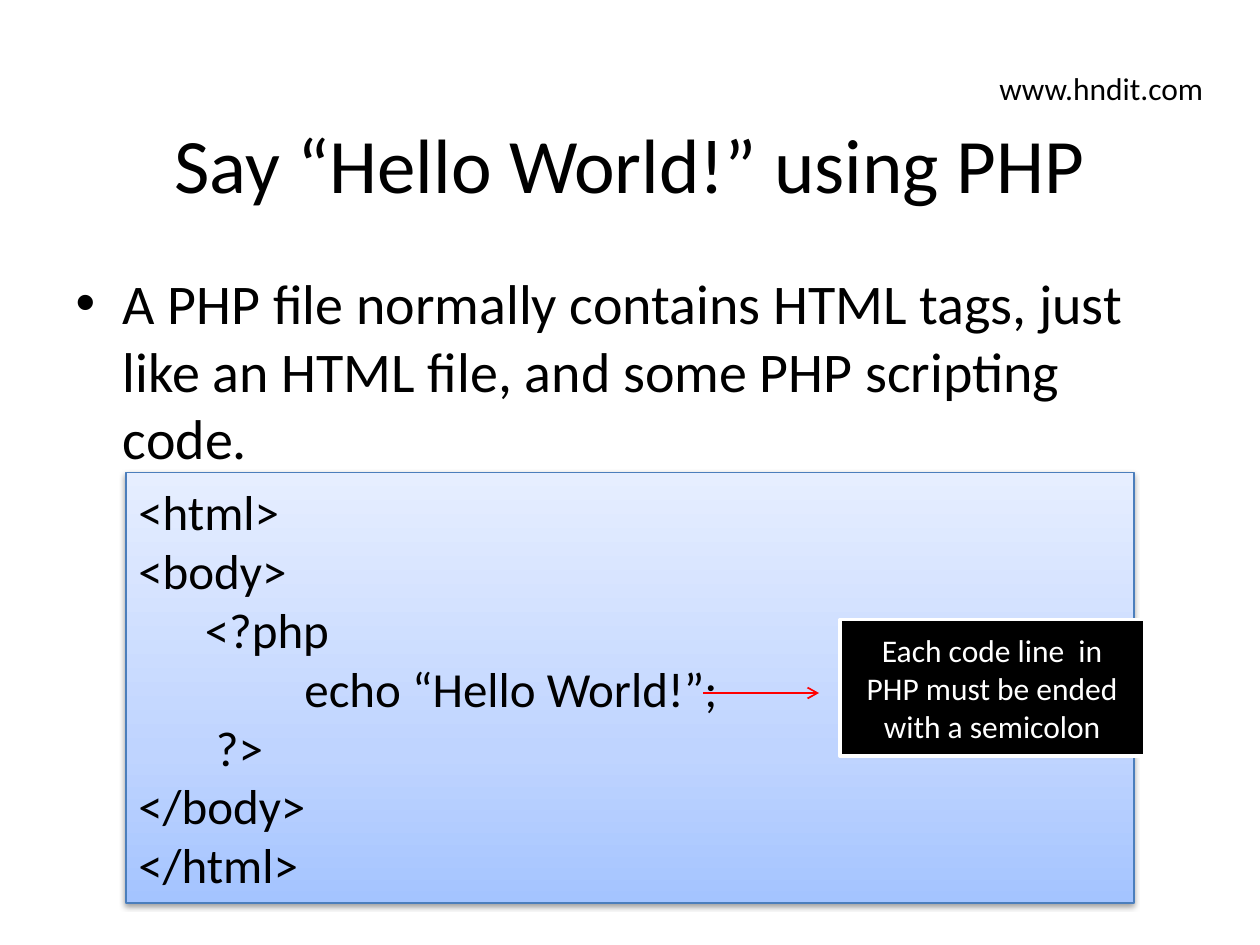
from lxml import etree
from pptx import Presentation, util as u
from pptx.dml.color import RGBColor
from pptx.enum import shapes, text
from pptx.oxml.ns import qn

COLORS = {"ink": "000000", "paper": "FFFFFF", "edge": "4B7EBC", "arrow": "FF0000"}
STOPS = [(0, "A4C4FF"), (35, "BFD4FF"), (100, "E6EEFF")]
CODE = [
    "<html>",
    "<body>",
    "      <?php",
    "               echo “Hello World!”;\v       ?>",
    "</body>",
    "</html>",
]


def rgb(name):
    return RGBColor.from_string(COLORS[name])


def add(parent, tag, **attrs):
    node = etree.SubElement(parent, qn(tag))
    for key, val in attrs.items():
        node.set(key, str(val))
    return node


class Deck:
    """Style and current slide; lengths are cells of a 120 by 90 grid."""

    font = "Calibri"
    cols, rows = 120, 90

    def __init__(self):
        self.prs = Presentation()
        self.prs.slide_width, self.prs.slide_height = u.Inches(10), u.Inches(7.5)
        self.slide = self.prs.slides.add_slide(self.prs.slide_layouts[1])

    def grid(self, x, y):
        return (round(self.prs.slide_width * x / self.cols),
                round(self.prs.slide_height * y / self.rows))

    def area(self, x, y, wide, high):
        return (*self.grid(x, y), *self.grid(wide, high))

    def fill_text(self, shape, lines, size, color="ink", align="LEFT", anchor="MIDDLE"):
        frame = shape.text_frame
        frame.word_wrap = True
        frame.vertical_anchor = getattr(text.MSO_ANCHOR, anchor)
        for i, line in enumerate(lines):
            para = frame.add_paragraph() if i else frame.paragraphs[0]
            para.text = line
            para.alignment = getattr(text.PP_ALIGN, align)
            para.space_before = u.Pt(0)
            for run in para.runs:
                run.font.name, run.font.size = self.font, u.Pt(size)
                run.font.color.rgb = rgb(color)
        return frame

    def holder(self, index, box, line, size, **style):
        shape = self.slide.placeholders[index]
        shape.left, shape.top, shape.width, shape.height = self.area(*box)
        self.fill_text(shape, [line], size, **style)

    def rect(self, box, edge, width):
        shape = self.slide.shapes.add_shape(
            shapes.MSO_SHAPE.RECTANGLE, *self.area(*box))
        shape.shadow.inherit = False
        shape.line.color.rgb, shape.line.width = rgb(edge), u.Pt(width)
        return shape

    def panel(self, box, lines, size):
        """Code panel with a gradient and a soft shadow."""
        shape = self.rect(box, "edge", 0.75)
        shape.fill.gradient()
        shape.fill.gradient_angle = 90
        props = shape._element.spPr
        stops = props.find(qn("a:gradFill")).find(qn("a:gsLst"))
        for old in list(stops):
            stops.remove(old)
        for pos, color in STOPS:
            add(add(stops, "a:gs", pos=pos * 1000), "a:srgbClr", val=color)
        shade = add(props.find(qn("a:effectLst")), "a:outerShdw",
                    blurRad=u.Pt(3.1), dist=u.Pt(1.6), dir=90 * 60000, rotWithShape=0)
        add(add(shade, "a:srgbClr", val=COLORS["ink"]), "a:alpha", val=38000)
        self.fill_text(shape, lines, size)

    def note(self, box, line, size):
        shape = self.rect(box, "paper", 2)
        shape.fill.solid()
        shape.fill.fore_color.rgb = rgb("ink")
        self.fill_text(shape, [line], size, color="paper", align="CENTER")

    def arrow(self, start, end):
        line = self.slide.shapes.add_connector(
            shapes.MSO_CONNECTOR.STRAIGHT, *self.grid(*start), *self.grid(*end))
        line.line.color.rgb, line.line.width = rgb("arrow"), u.Pt(1)
        props = line._element.spPr
        add(props.find(qn("a:ln")), "a:tailEnd", type="arrow")
        add(props, "a:effectLst")

    def label(self, box, line, size):
        shape = self.slide.shapes.add_textbox(*self.area(*box))
        frame = self.fill_text(shape, [line], size, anchor="TOP")
        frame.word_wrap = False
        frame.auto_size = text.MSO_AUTO_SIZE.SHAPE_TO_FIT_TEXT


def main():
    deck = Deck()
    deck.holder(0, (6, 8, 108, 15), "Say “Hello World!” using PHP", 44, align="CENTER")
    deck.holder(1, (6, 25, 108, 55.5),
                "A PHP file normally contains HTML tags, just like an HTML file, "
                "and some PHP scripting code.", 32, anchor="TOP")
    deck.panel((12, 45, 96, 41), CODE, 28)
    deck.arrow((67, 66), (78, 66))
    deck.note((80, 59, 29, 13), "Each code line  in PHP must be ended with a semicolon", 18)
    deck.label((94, 6, 21.8, 4.8), "www.hndit.com", 18)
    deck.prs.save("out.pptx")


if __name__ == "__main__":
    main()
